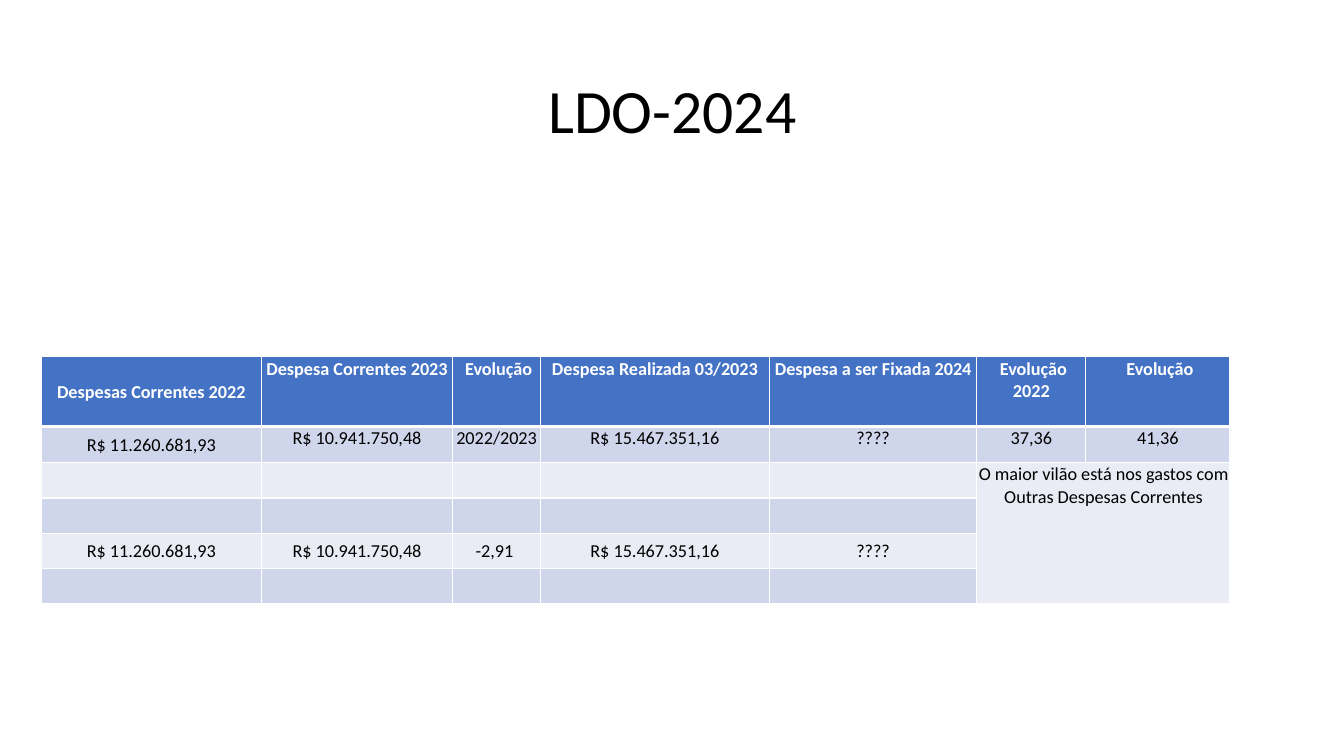
import pptx
import pptx.dml.color
import pptx.enum.text
import pptx.oxml.ns
import pptx.util
import lxml.etree

Inches = pptx.util.Inches
Anchor = pptx.enum.text.MSO_ANCHOR

COLS = [2.18, 1.9, 0.87, 2.27, 2.06, 1.08, 1.43]
ROWS = [0.69, 0.36, 0.35, 0.35, 0.35, 0.35]
HEAD = "4472C4"
BANDS = ["E9EBF5", "CFD5EA"]
DATA = [
    ["Despesas Correntes 2022", "Despesa Correntes 2023", " Evolução",
     "Despesa Realizada 03/2023", "Despesa a ser Fixada 2024",
     " Evolução 2022", " Evolução"],
    ["R$ 11.260.681,93", "R$ 10.941.750,48", "2022/2023",
     "R$ 15.467.351,16", "????", "37,36", "41,36"],
    [""] * 5 + ["O maior vilão está nos gastos com Outras Despesas Correntes", ""],
    [""] * 7,
    ["R$ 11.260.681,93", "R$ 10.941.750,48", "-2,91 ",
     "R$ 15.467.351,16", "????", "", ""],
    [""] * 7,
]


def color(code):
    return pptx.dml.color.RGBColor.from_string(code)


def add(parent, tag, **attrs):
    return lxml.etree.SubElement(parent, pptx.oxml.ns.qn(tag), **attrs)


def write(frame, text, size=13, ink="000000", bold=False, space=None):
    para = frame.paragraphs[0]
    para.alignment = pptx.enum.text.PP_ALIGN.CENTER
    para.line_spacing = space
    if not text:
        add(para._p, "a:endParaRPr", sz=str(size * 100))
        return
    run = para.add_run()
    run.text = text
    run.font.name = "Calibri"
    run.font.size = pptx.util.Pt(size)
    run.font.bold = bold
    run.font.color.rgb = color(ink)


def edge(cell, row):
    props = cell._tc.get_or_add_tcPr()
    for side in "LRTB":
        thick = (row, side) in [(0, "B"), (1, "T")]
        width = pptx.util.Pt(3 if thick else 1)
        line = add(props, "a:ln" + side, w=str(width))
        add(add(line, "a:solidFill"), "a:srgbClr", val="FFFFFF")


def paint(cell, row, col, text):
    edge(cell, row)
    cell.fill.solid()
    cell.fill.fore_color.rgb = color(BANDS[row % 2] if row else HEAD)
    cell.margin_left = cell.margin_right = cell.margin_top = Inches(0.01)
    cell.margin_bottom = 0
    middle = row == 4 or (col == 0 and row < 2)
    cell.vertical_anchor = Anchor.MIDDLE if middle else Anchor.TOP
    write(cell.text_frame, text, ink="000000" if row else "FFFFFF", bold=row == 0)


def add_title(slide, text):
    title = slide.shapes.title
    title.left, title.top = Inches(0.92), Inches(0.4)
    title.width, title.height = Inches(11.5), Inches(1.45)
    title.text_frame.vertical_anchor = Anchor.MIDDLE
    write(title.text_frame, text, size=44, space=0.9)


def add_grid(slide):
    table = slide.shapes.add_table(
        len(ROWS), len(COLS), Inches(0.41), Inches(3.54),
        Inches(sum(COLS)), Inches(sum(ROWS))).table
    for col, width in zip(table.columns, COLS):
        col.width = Inches(width)
    for row, height in zip(table.rows, ROWS):
        row.height = Inches(height)
    table.cell(2, 5).merge(table.cell(5, 6))
    for row, texts in enumerate(DATA):
        for col, text in enumerate(texts):
            paint(table.cell(row, col), row, col, text)


def main():
    deck = pptx.Presentation()
    deck.slide_width, deck.slide_height = Inches(13.33), Inches(7.5)
    slide = deck.slides.add_slide(deck.slide_layouts[5])
    add_title(slide, "LDO-2024")
    add_grid(slide)
    deck.save("out.pptx")


if __name__ == "__main__":
    main()
